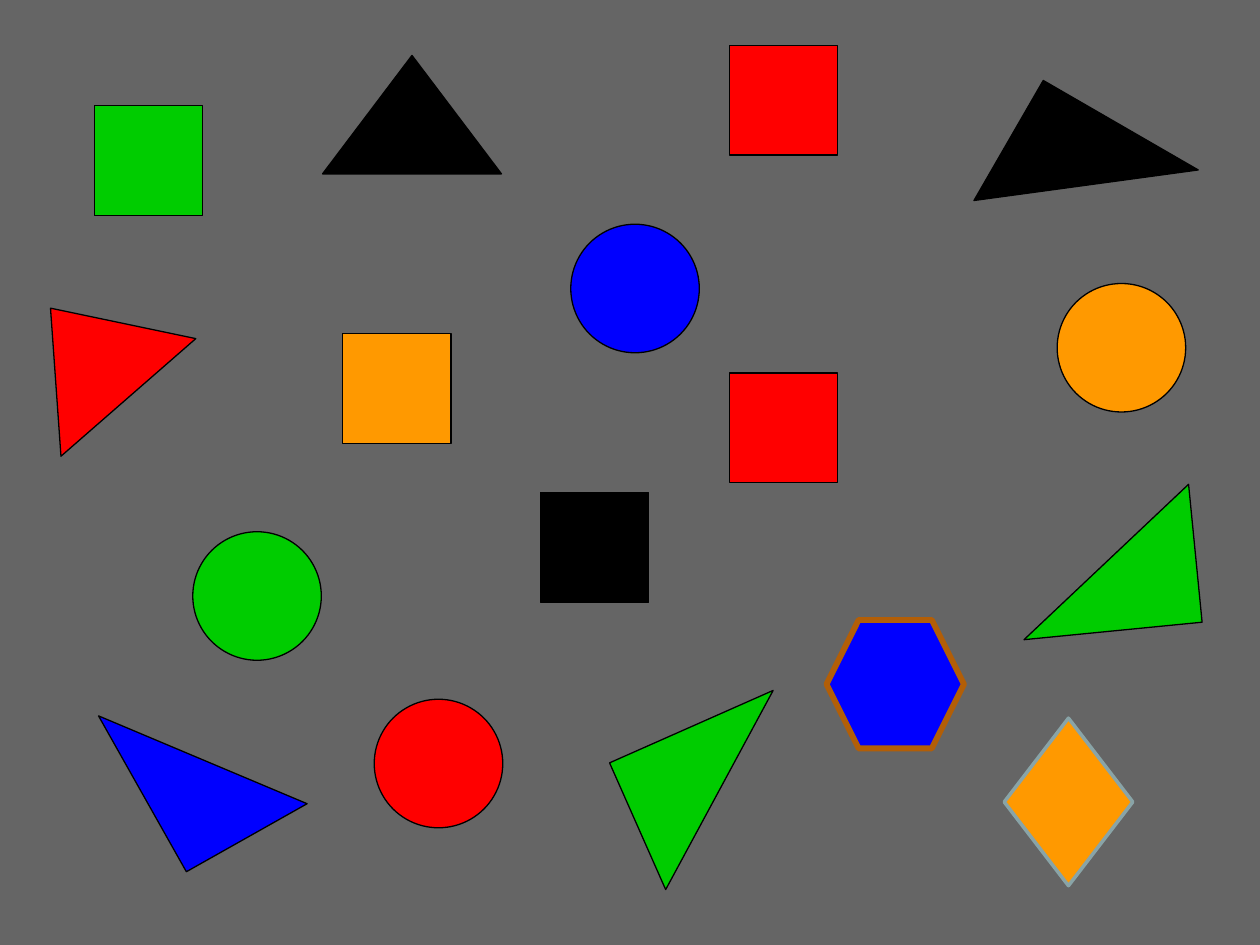
from pptx import Presentation
from pptx.dml.color import RGBColor
from pptx.enum.shapes import MSO_SHAPE
from pptx.util import Inches, Pt

TRIANGLE = MSO_SHAPE.ISOSCELES_TRIANGLE
RIGHT_TRIANGLE = MSO_SHAPE.RIGHT_TRIANGLE
CIRCLE = MSO_SHAPE.OVAL
SQUARE = MSO_SHAPE.RECTANGLE
HEXAGON = MSO_SHAPE.HEXAGON
DIAMOND = MSO_SHAPE.DIAMOND

GRAY = RGBColor(0x65, 0x65, 0x65)
BLACK = RGBColor(0x00, 0x00, 0x00)
BLUE = RGBColor(0x00, 0x00, 0xFF)
RED = RGBColor(0xFF, 0x00, 0x00)
GREEN = RGBColor(0x00, 0xCC, 0x00)
ORANGE = RGBColor(0xFF, 0x99, 0x00)
BROWN = RGBColor(0xB2, 0x5E, 0x07)
BLUE_GRAY = RGBColor(0x89, 0xA4, 0xA7)

SIZES = {
    TRIANGLE: (1.42, 0.94),
    RIGHT_TRIANGLE: (1.1, 1.42),
    CIRCLE: (1.02, 1.02),
    SQUARE: (0.86, 0.87),
    HEXAGON: (1.09, 1.02),
    DIAMOND: (1.02, 1.33),
}
OUTLINES = {HEXAGON: (BROWN, 3.35), DIAMOND: (BLUE_GRAY, 2)}
THIN_BLACK = (BLACK, 0.75)

FIGURES = [
    (TRIANGLE, 2.56, 0.44, 0, BLACK),
    (RIGHT_TRIANGLE, 1.06, 5.32, 330.6, BLUE),
    (TRIANGLE, 0, 2.33, 318.9, RED),
    (RIGHT_TRIANGLE, 5.16, 5.56, 66.1, GREEN),
    (RIGHT_TRIANGLE, 8.23, 3.75, 264.4, GREEN),
    (RIGHT_TRIANGLE, 8.07, 0.76, 120, BLACK),
    (CIRCLE, 1.53, 4.22, 0, GREEN),
    (CIRCLE, 4.53, 1.78, 0, BLUE),
    (CIRCLE, 2.97, 5.55, 0, RED),
    (CIRCLE, 8.39, 2.25, 0, ORANGE),
    (SQUARE, 5.79, 2.96, 0, RED),
    (SQUARE, 0.75, 0.84, 0, GREEN),
    (SQUARE, 2.72, 2.65, 0, ORANGE),
    (SQUARE, 5.79, 0.36, 0, RED),
    (SQUARE, 4.29, 3.91, 0, BLACK),
    (HEXAGON, 6.56, 4.92, 0, BLUE),
    (DIAMOND, 7.97, 5.7, 0, ORANGE),
]

presentation = Presentation()
presentation.slide_width = Inches(10)
presentation.slide_height = Inches(7.5)
slide = presentation.slides.add_slide(presentation.slide_layouts[6])
slide.background.fill.solid()
slide.background.fill.fore_color.rgb = GRAY

for kind, left, top, rotation, color in FIGURES:
    width, height = SIZES[kind]
    shape = slide.shapes.add_shape(
        kind, Inches(left), Inches(top), Inches(width), Inches(height)
    )
    shape.rotation = rotation
    shape.shadow.inherit = False
    shape.fill.solid()
    shape.fill.fore_color.rgb = color
    line_color, line_width = OUTLINES.get(kind, THIN_BLACK)
    shape.line.color.rgb = line_color
    shape.line.width = Pt(line_width)

presentation.save("out.pptx")
